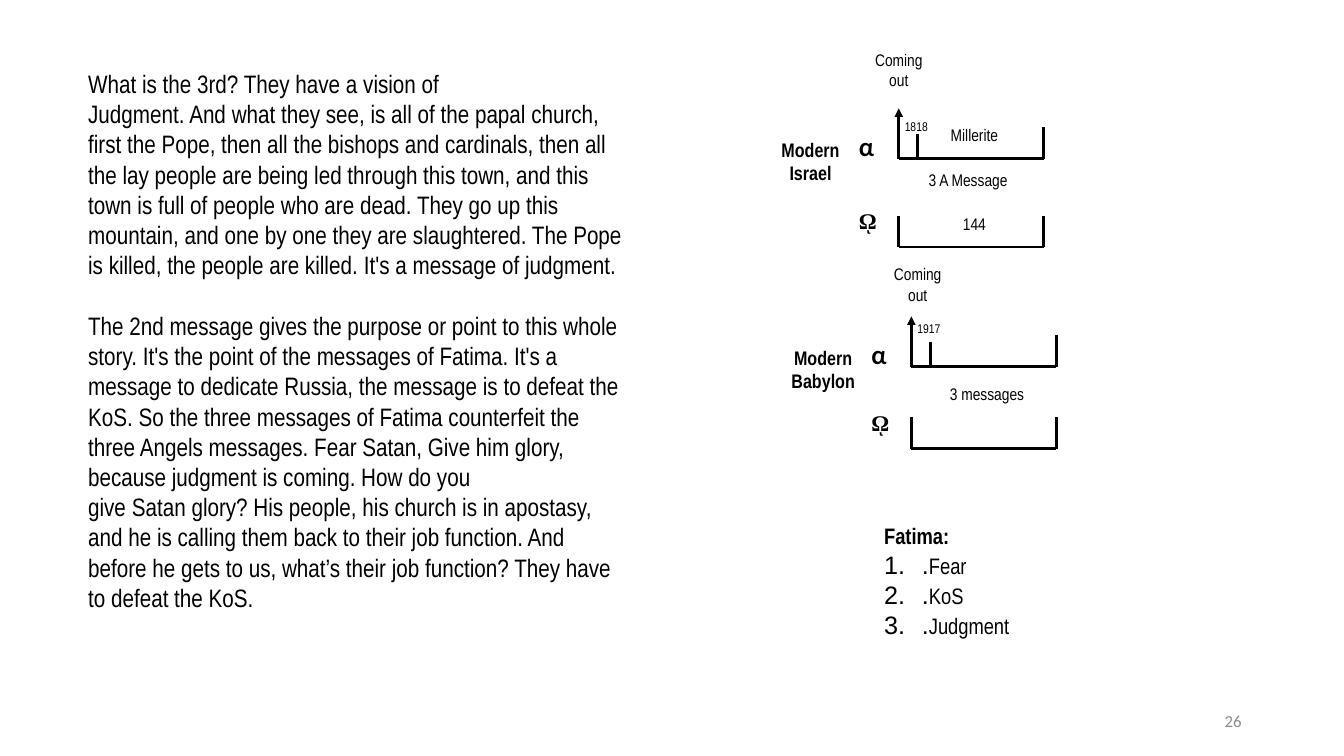
import pptx
import pptx.dml.color
import pptx.enum.dml
import pptx.enum.shapes
import pptx.enum.text
import pptx.oxml.ns
import pptx.util
import lxml.etree

Pt = pptx.util.Pt
Align = pptx.enum.text.PP_ALIGN
Anchor = pptx.enum.text.MSO_ANCHOR
qn = pptx.oxml.ns.qn

BLACK = pptx.dml.color.RGBColor(0x00, 0x00, 0x00)
GREY = pptx.dml.color.RGBColor(0x8C, 0x8C, 0x8C)
NARROW = "Arial Narrow"
SPAN, WALL = 103.5, 22.5  # width and height of a bracket

# A tilde marks a space that must not break
VISION = (
    "What is the 3rd? They have a vision of Judgment.~And~what they see, is all of "
    "the papal church, first the Pope, then all the bishops and cardinals, then all "
    "the lay people are being led through this town, and this town is full of people "
    "who are dead. They go up this mountain, and one by one they are slaughtered. "
    "The Pope is killed, the people are killed.~It's~a message of judgment.~"
)
PURPOSE = (
    "The 2nd message gives the purpose or point to this whole story.~It's~the point "
    "of the messages of Fatima. It's a message to dedicate Russia, the message is to "
    "defeat the KoS. So the three messages of Fatima counterfeit the three Angels "
    "messages. Fear Satan, Give him glory, because judgment is coming. How do you "
    "give~Satan~glory? His people, his church is in apostasy, and he is calling them "
    "back to their job function. And before he gets to us, what’s their job function? "
    "They have to defeat the KoS.~"
)


def add_run(para, text, size, font=NARROW, bold=False, color=BLACK):
    run = para.add_run()
    run.text = text.replace("~", chr(160))
    run.font.size = Pt(size)
    run.font.name = font
    run.font.bold = bold
    run.font.color.rgb = color


def add_frame(slide, left, top, width, height, inset=3):
    box = slide.shapes.add_textbox(Pt(left), Pt(top), Pt(width), Pt(height))
    frame = box.text_frame
    frame.word_wrap = True
    frame.margin_left = frame.margin_right = Pt(inset)
    frame.margin_top = frame.margin_bottom = Pt(3)
    return frame


def add_label(slide, left, top, width, height, lines, size,
              font=NARROW, bold=False, align=Align.CENTER):
    frame = add_frame(slide, left, top, width, height)
    for i, line in enumerate(lines):
        para = frame.add_paragraph() if i else frame.paragraphs[0]
        para.alignment = align
        add_run(para, line, size, font, bold)


def add_line(slide, x1, y1, x2, y2, arrow=False):
    line = slide.shapes.add_connector(
        pptx.enum.shapes.MSO_CONNECTOR.STRAIGHT, Pt(x1), Pt(y1), Pt(x2), Pt(y2))
    line.line.color.rgb = BLACK
    line.line.width = Pt(2)
    props = line._element.spPr
    if arrow:
        lxml.etree.SubElement(props.find(qn("a:ln")), qn("a:tailEnd"), type="triangle")
    lxml.etree.SubElement(props, qn("a:effectLst"))


def add_bracket(slide, left, base):
    add_line(slide, left, base, left + SPAN, base)
    for x in (left, left + SPAN):
        add_line(slide, x, base - WALL, x, base)


def add_history(slide, left, alpha, omega, name, arrow):
    """Two brackets with their Greek signs, a name, a start arrow and a year tick."""
    for base in (alpha, omega):
        add_bracket(slide, left, base)
    add_line(slide, left, alpha - 36 + arrow, left, alpha - 36, arrow=True)
    add_line(slide, left + 13.5, alpha - 18, left + 13.5, alpha)
    add_label(slide, left - 90, alpha - 18, 54, 50, ["Modern", name], 14, bold=True)
    add_label(slide, left - 31.5, alpha - 22.5, 22.5, 22.5, ["α"], 18, "Lato", True, Align.LEFT)
    add_label(slide, left - 31.5, omega - 31.5, 22.5, 40, ["ῼ"], 16,
              "Times New Roman", True, Align.LEFT)


def add_story(slide):
    frame = add_frame(slide, 55.9, 45.7, 396, 422, inset=7.2)
    first = frame.paragraphs[0]
    add_run(first, VISION, 18)
    first.space_after = Pt(21.6)
    add_run(frame.add_paragraph(), PURPOSE, 18)


def add_list(slide, title, items):
    frame = add_frame(slide, 628.5, 370, 148.5, 108)
    add_run(frame.paragraphs[0], title, 16, bold=True)
    for item in items:
        para = frame.add_paragraph()
        props = para._p.get_or_add_pPr()
        props.set("marL", str(Pt(27)))
        props.set("indent", str(-Pt(27)))
        lxml.etree.SubElement(props, qn("a:buAutoNum"), type="arabicPeriod")
        add_run(para, ".", 18, "Arial")
        add_run(para, item, 16)


def add_number(slide, text):
    frame = add_frame(slide, 678, 500.5, 216, 28.5, inset=7.2)
    frame.vertical_anchor = Anchor.MIDDLE
    para = frame.paragraphs[0]
    para.alignment = Align.RIGHT
    add_run(para, text, 12, "Calibri", color=GREY)


def main():
    deck = pptx.Presentation()
    deck.slide_width, deck.slide_height = Pt(960), Pt(540)
    slide = deck.slides.add_slide(deck.slide_layouts[6])

    # Story on the left
    add_story(slide)

    # Brackets on the right
    add_history(slide, 642, 113.4, 176.5, "Israel", 22.5)
    add_history(slide, 651, 262, 320.5, "Babylon", 13.5)

    # Labels around the brackets
    for left, top, width, height, text, size in (
        (615, 32.5, 54, 40, "Coming out", 12),
        (642, 82, 25, 17, "1818", 9),
        (669, 86.2, 54, 22.5, "Millerite", 12),
        (642, 118, 99, 22.5, "3 A Message", 12),
        (669, 149.5, 54, 22.5, "144", 12),
        (628.5, 185.7, 54, 40, "Coming out", 12),
        (651, 226, 25, 17, "1917", 9),
        (655.5, 271, 99, 22.5, "3 messages", 12),
    ):
        add_label(slide, left, top, width, height, [text], size)

    # List and slide number
    add_list(slide, "Fatima:", ["Fear", "KoS", "Judgment"])
    add_number(slide, "26")

    deck.save("out.pptx")


if __name__ == "__main__":
    main()
